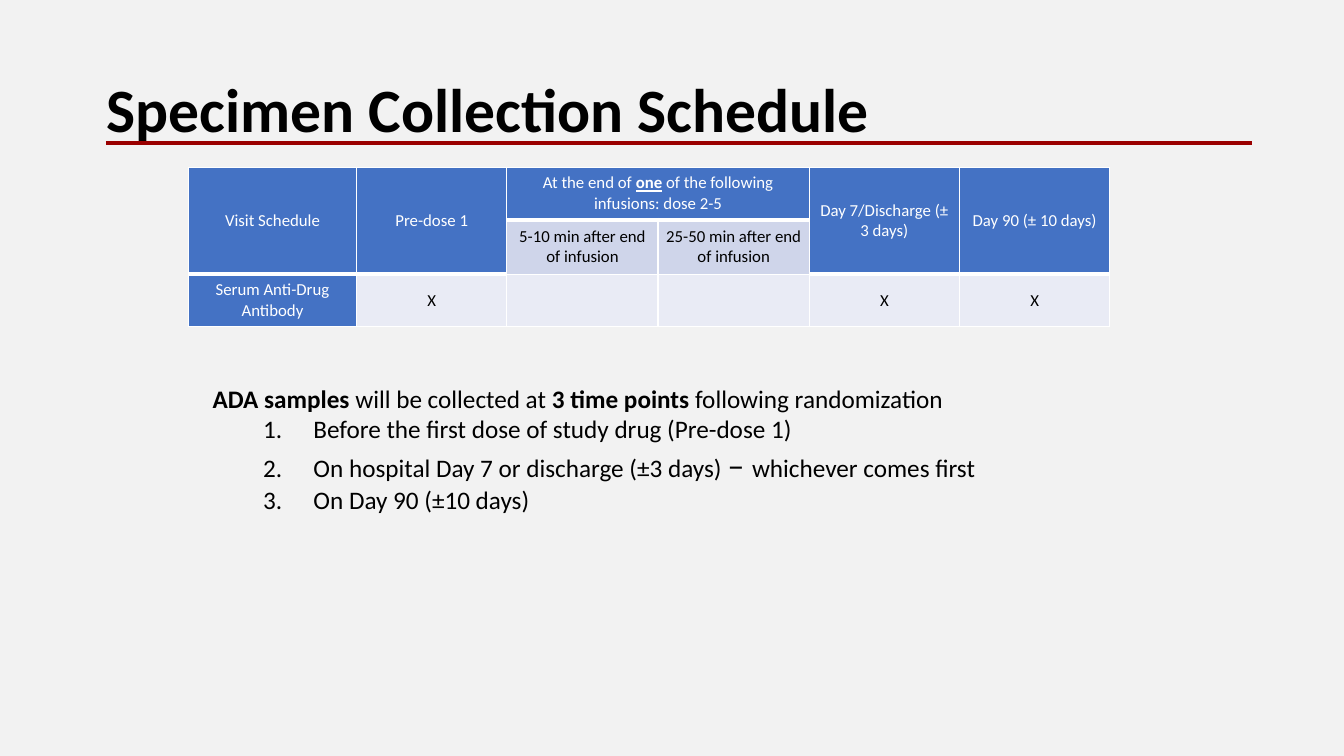
from typing import NamedTuple

from pptx import Presentation
from pptx.dml.color import RGBColor
from pptx.enum.shapes import MSO_CONNECTOR
from pptx.enum.text import MSO_ANCHOR as Anchor, MSO_AUTO_SIZE as AutoSize, PP_ALIGN as Align
from pptx.oxml import parse_xml
from pptx.oxml.ns import nsdecls, qn
from pptx.oxml.xmlchemy import OxmlElement
from pptx.util import Pt

FONT = "Calibri"
BLACK, WHITE, RED = "000000", "FFFFFF", "9A0000"
BACKGROUND, HEADER, SUBHEADER, BODY = "F2F2F2", "4472C4", "CFD5EA", "E9EBF5"
COLUMN_WIDTHS = [120.2, 107.3, 108, 108, 107.3, 107.3]
ROW_HEIGHTS = [37.4, 38.9, 37.4]


class Span(NamedTuple):
    text: str
    bold: bool = False
    underline: bool = False
    size: float = 18


class Entry(NamedTuple):
    row: int
    column: int
    spans: list[Span]
    fill: str
    rows: int = 1
    columns: int = 1


def label(text: str) -> list[Span]:
    return [Span(text, size=12)]


ENTRIES = [
    Entry(0, 0, label("Visit Schedule"), HEADER, rows=2),
    Entry(0, 1, label("Pre-dose 1"), HEADER, rows=2),
    Entry(0, 2, [Span("At the end of ", size=12), Span("one", True, True, 12),
                 Span(" of the following infusions: dose 2-5", size=12)], HEADER, columns=2),
    Entry(0, 4, label("Day 7/Discharge (± 3 days)"), HEADER, rows=2),
    Entry(0, 5, label("Day 90 (± 10 days)"), HEADER, rows=2),
    Entry(1, 2, label("5-10 min after end of infusion"), SUBHEADER),
    Entry(1, 3, label("25-50 min after end of infusion"), SUBHEADER),
    Entry(2, 0, label("Serum Anti-Drug Antibody"), HEADER),
    Entry(2, 1, label("X"), BODY),
    Entry(2, 2, [], BODY),
    Entry(2, 3, [], BODY),
    Entry(2, 4, label("X"), BODY),
    Entry(2, 5, label("X"), BODY),
]

INTRO = [Span("ADA samples ", True), Span("will be collected at "),
         Span("3 time points ", True), Span("following randomization")]
TIME_POINTS = [
    [Span("Before the first dose of study drug (Pre-dose 1)")],
    [Span("On hospital Day 7 or discharge (±3 days) "), Span("– ", size=24),
     Span("whichever comes first")],
    [Span("On Day 90 (±10 days)")],
]


def color(value: str) -> RGBColor:
    return RGBColor.from_string(value)


def place(shape, left: float, top: float, width: float, height: float) -> None:
    shape.left, shape.top, shape.width, shape.height = map(Pt, (left, top, width, height))


def write(para, spans: list[Span], ink: str) -> None:
    for span in spans:
        run = para.add_run()
        run.text = span.text
        font = run.font
        font.name, font.size = FONT, Pt(span.size)
        font.bold, font.underline = span.bold, span.underline
        font.color.rgb = color(ink)


def add_borders(cell, bottom: float) -> None:
    properties = cell._tc.get_or_add_tcPr()
    for index, (side, width) in enumerate(zip("LRTB", (1, 1, 1, bottom))):
        properties.insert(index, parse_xml(
            f'<a:ln{side} {nsdecls("a")} w="{Pt(width)}"><a:solidFill>'
            f'<a:srgbClr val="{WHITE}"/></a:solidFill></a:ln{side}>'))


def set_list_style(para, left: float, hanging: float, numbered: bool) -> None:
    para.space_before = Pt(0)
    para.line_spacing = 1.0
    properties = para._p.get_or_add_pPr()
    properties.set("marL", str(Pt(left)))
    properties.set("indent", str(Pt(-hanging)))
    bullet = OxmlElement("a:buAutoNum" if numbered else "a:buNone")
    if numbered:
        typeface = OxmlElement("a:buFont")
        typeface.set("typeface", "+mj-lt")
        properties.append(typeface)
        bullet.set("type", "arabicPeriod")
    properties.append(bullet)


def add_title(page) -> None:
    title = page.shapes.title
    place(title, 69.1, 60.5, 789.1, 39.6)
    frame = title.text_frame
    frame.auto_size, frame.vertical_anchor = AutoSize.NONE, Anchor.MIDDLE
    para = frame.paragraphs[0]
    para.alignment, para.line_spacing = Align.LEFT, 0.9
    write(para, [Span("Specimen Collection Schedule", True, size=44)], BLACK)


def add_schedule(page) -> None:
    table = page.shapes.add_table(
        len(ROW_HEIGHTS), len(COLUMN_WIDTHS), Pt(134.6), Pt(119.5),
        Pt(sum(COLUMN_WIDTHS)), Pt(sum(ROW_HEIGHTS))).table
    table.first_row = table.horz_banding = False
    for column, width in zip(table.columns, COLUMN_WIDTHS):
        column.width = Pt(width)
    for row, height in zip(table.rows, ROW_HEIGHTS):
        row.height = Pt(height)
    for entry in ENTRIES:
        cell = table.cell(entry.row, entry.column)
        if entry.rows * entry.columns > 1:
            cell.merge(table.cell(entry.row + entry.rows - 1,
                                  entry.column + entry.columns - 1))
        cell.fill.solid()
        cell.fill.fore_color.rgb = color(entry.fill)
        add_borders(cell, bottom=3 if entry.row == 0 else 1)
        cell.vertical_anchor = Anchor.MIDDLE
        cell.margin_left = cell.margin_right = Pt(5)
        cell.margin_top = cell.margin_bottom = Pt(0)
        para = cell.text_frame.paragraphs[0]
        para.alignment = Align.CENTER
        write(para, entry.spans, WHITE if entry.fill == HEADER else BLACK)


def add_time_points(page) -> None:
    body = page.placeholders[1]
    place(body, 144.7, 270, 637.2, 101.5)
    frame = body.text_frame
    frame.auto_size = AutoSize.SHAPE_TO_FIT_TEXT
    intro = frame.paragraphs[0]
    set_list_style(intro, 0, 0, numbered=False)
    write(intro, INTRO, BLACK)
    for spans in TIME_POINTS:
        para = frame.add_paragraph()
        para.level = 1
        set_list_style(para, 72, 36, numbered=True)
        write(para, spans, BLACK)


def add_title_rule(page) -> None:
    rule = page.shapes.add_connector(
        MSO_CONNECTOR.STRAIGHT, Pt(75.6), Pt(102.2), Pt(894.2), Pt(102.2))
    rule.line.color.rgb = color(RED)
    rule.line.width = Pt(3)
    rule._element.find(qn("p:spPr")).append(OxmlElement("a:effectLst"))


def main() -> None:
    deck = Presentation()
    deck.slide_width, deck.slide_height = Pt(960), Pt(540)
    page = deck.slides.add_slide(deck.slide_layouts[1])
    page.background.fill.solid()
    page.background.fill.fore_color.rgb = color(BACKGROUND)
    add_title(page)
    add_schedule(page)
    add_time_points(page)
    add_title_rule(page)
    deck.save("out.pptx")


if __name__ == "__main__":
    main()
